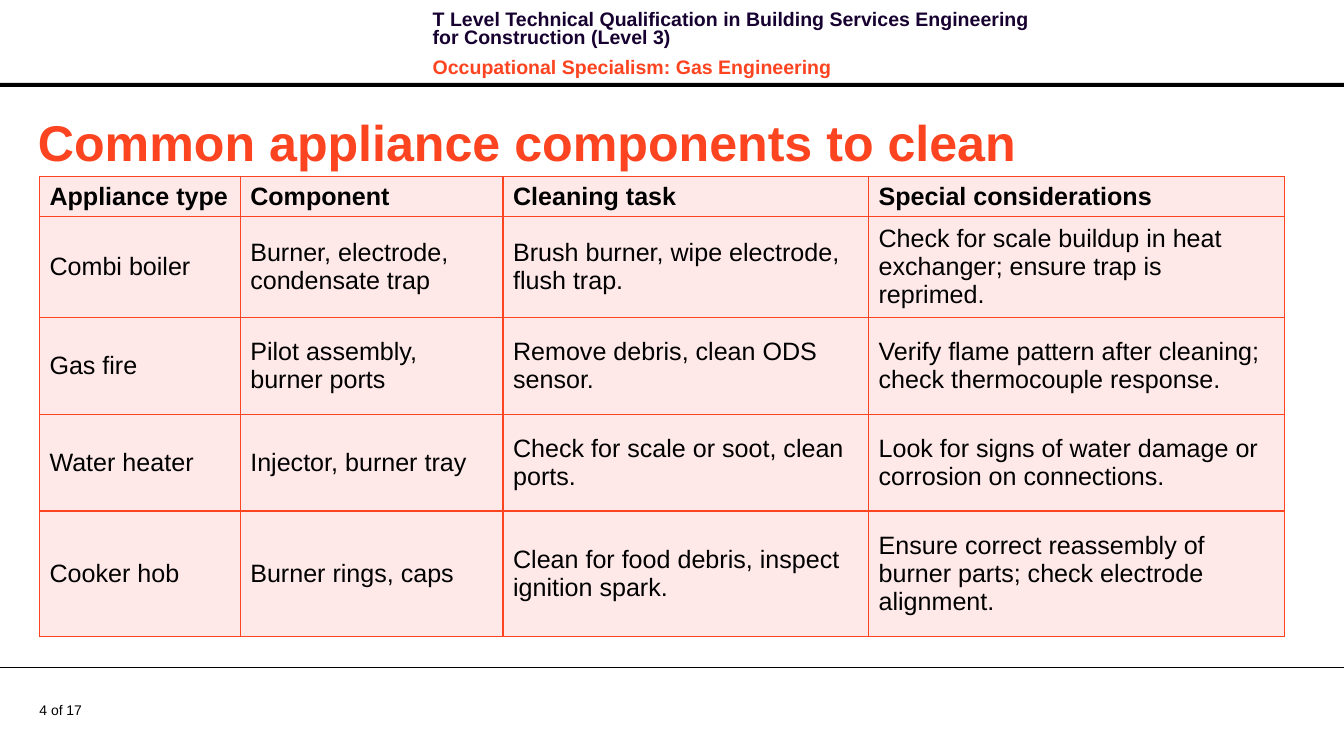
from pptx import Presentation
from pptx.dml.color import RGBColor
from pptx.enum.shapes import MSO_CONNECTOR, MSO_SHAPE
from pptx.enum.text import MSO_ANCHOR
from pptx.oxml.ns import qn
from pptx.util import Cm, Pt
from lxml.etree import SubElement

COURSE = "T Level Technical Qualification in Building Services Engineering for Construction (Level 3)"
SPECIALISM = "Occupational Specialism: Gas Engineering"
TITLE = "Common appliance components to clean"
PAGE = "4 of 17"
ROWS = [
    ("Appliance type", "Component", "Cleaning task", "Special considerations"),
    ("Combi boiler", "Burner, electrode, condensate trap", "Brush burner, wipe electrode, flush trap.",
     "Check for scale buildup in heat exchanger; ensure trap is reprimed."),
    ("Gas fire", "Pilot assembly, burner ports", "Remove debris, clean ODS sensor.",
     "Verify flame pattern after cleaning; check thermocouple response."),
    ("Water heater", "Injector, burner tray", "Check for scale or soot, clean ports.",
     "Look for signs of water damage or corrosion on connections."),
    ("Cooker hob", "Burner rings, caps", "Clean for food debris, inspect ignition spark.",
     "Ensure correct reassembly of burner parts; check electrode alignment."),
]
COL_WIDTHS = [5.08, 6.65, 9.25, 10.52]
ROW_HEIGHTS = [0.98, 2.45, 2.45, 2.45, 3.18]
COLORS = {"black": "000000", "navy": "170130", "orange": "FC4421", "pink": "FEE9E8"}
WIDTH, HEIGHT, MARGIN = 34.01, 19, 1


def rgb(name):
    return RGBColor.from_string(COLORS[name])


def set_font(p, size, color, bold=False):
    p.font.name = "Arial"
    p.font.size = Pt(size)
    p.font.bold = bold
    p.font.color.rgb = rgb(color)


def add_text(s, box, lines, size, bold=True, anchor=MSO_ANCHOR.MIDDLE):
    tf = s.shapes.add_textbox(*map(Cm, box)).text_frame
    tf.word_wrap = True
    tf.vertical_anchor = anchor
    for i, (text, color) in enumerate(lines):
        p = tf.add_paragraph() if i else tf.paragraphs[0]
        p.text = text
        set_font(p, size, color, bold)
    return tf


def add_borders(cell, color, width):
    tcPr = cell._tc.get_or_add_tcPr()
    for i, side in enumerate(("lnL", "lnR", "lnT", "lnB")):
        ln = tcPr.makeelement(qn(f"a:{side}"), {"w": str(Pt(width))})
        fill = SubElement(ln, qn("a:solidFill"))
        SubElement(fill, qn("a:srgbClr"), val=COLORS[color])
        tcPr.insert(i, ln)


def add_appliance_table(s, left, top):
    shape = s.shapes.add_table(len(ROWS), len(COL_WIDTHS), Cm(left), Cm(top),
                               Cm(sum(COL_WIDTHS)), Cm(sum(ROW_HEIGHTS)))
    table = shape.table
    table.first_row = table.horz_banding = False
    for col, width in zip(table.columns, COL_WIDTHS):
        col.width = Cm(width)
    for r, (row, height, texts) in enumerate(zip(table.rows, ROW_HEIGHTS, ROWS)):
        row.height = Cm(height)
        for cell, text in zip(row.cells, texts):
            cell.text = text
            cell.vertical_anchor = MSO_ANCHOR.MIDDLE
            cell.fill.solid()
            cell.fill.fore_color.rgb = rgb("pink")
            set_font(cell.text_frame.paragraphs[0], 18, "black", r == 0)
            add_borders(cell, "orange", 1)


def main():
    prs = Presentation()
    prs.slide_width, prs.slide_height = Cm(WIDTH), Cm(HEIGHT)
    s = prs.slides.add_slide(prs.slide_layouts[6])

    bar = s.shapes.add_shape(MSO_SHAPE.RECTANGLE, 0, Cm(2.1), Cm(WIDTH), Cm(0.1))
    bar.shadow.inherit = False
    bar.fill.solid()
    bar.fill.fore_color.rgb = rgb("black")
    bar.line.fill.background()

    tf = add_text(s, (MARGIN, 17.75, 1.63, 0.43), [(PAGE, "black")], 10, bold=False)
    tf.word_wrap = False
    tf.margin_left = tf.margin_right = tf.margin_top = tf.margin_bottom = 0

    rule = s.shapes.add_connector(MSO_CONNECTOR.STRAIGHT, 0, Cm(16.89), Cm(WIDTH), Cm(16.89))
    rule.line.color.rgb = rgb("black")
    rule.line.width = Pt(0.75)
    SubElement(rule._element.spPr, qn("a:effectLst"))

    tf = add_text(s, (10.7, 0.18, 16.18, 1.63), [(COURSE, "navy"), (SPECIALISM, "orange")],
                  14, anchor=MSO_ANCHOR.TOP)
    for i, p in enumerate(tf.paragraphs):
        p.line_spacing = Pt(13.1)
        p.space_after = Pt(4)
        if i:
            p.space_before = Pt(4)

    add_text(s, (0.71, 2.67, 32.31, 1.8), [(TITLE, "orange")], 36)
    add_appliance_table(s, MARGIN, 4.47)
    prs.save("out.pptx")


if __name__ == "__main__":
    main()
